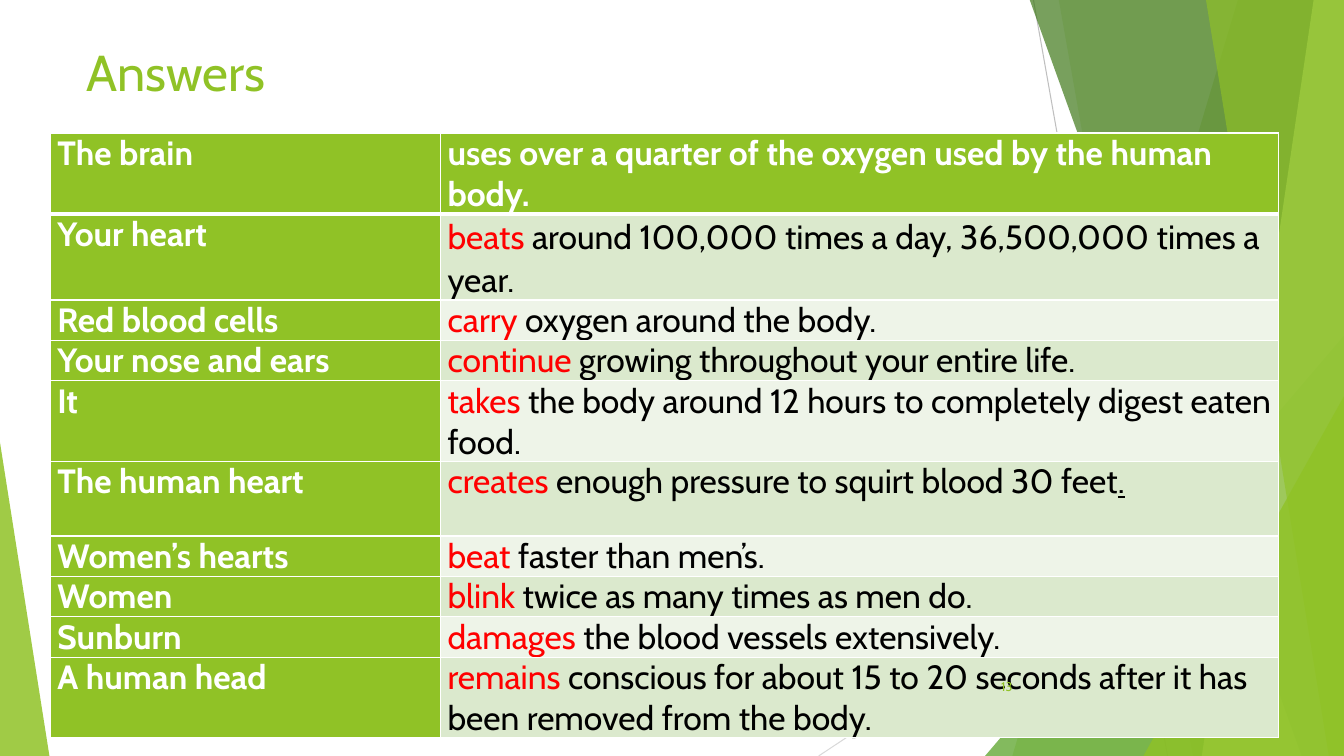
from dataclasses import dataclass

from lxml.etree import SubElement
from pptx import Presentation
from pptx.dml.color import RGBColor
from pptx.enum.shapes import MSO_CONNECTOR, MSO_SHAPE
from pptx.enum.text import MSO_ANCHOR, PP_ALIGN
from pptx.oxml import parse_xml
from pptx.oxml.ns import nsdecls, qn
from pptx.util import Inches, Pt


@dataclass(frozen=True)
class Theme:
    font: str = "Cabin"
    lime: str = "90C226"
    green: str = "54A021"
    dark: str = "3F7819"
    pale: str = "C0E474"
    white: str = "FFFFFF"
    black: str = "000000"
    red: str = "FF0000"
    bands: tuple = ("EEF4E8", "DBE9CD")
    title: int = 36
    body: int = 24
    small: int = 9


THEME = Theme()
WIDE, HIGH = 13.33, 7.5

# Row height, subject, verb, rest of the sentence
FACTS = [
    (0.8, "The brain", "uses", " over a quarter of the oxygen used by the human body."),
    (0.85, "Your heart", "beats", " around 100,000 times a day, 36,500,000 times a year."),
    (0.4, "Red blood cells", "carry", " oxygen around the body."),
    (0.4, "Your nose and ears", "continue", " growing throughout your entire life."),
    (0.8, "It", "takes", " the body around 12 hours to completely digest eaten food."),
    (0.74, "The human heart", "creates", " enough pressure to squirt blood 30 feet."),
    (0.4, "Women’s hearts", "beat", " faster than men’s."),
    (0.4, "Women", "blink", " twice as many times as men do."),
    (0.4, "Sunburn", "damages", " the blood vessels extensively."),
    (0.8, "A human head", "remains",
     " conscious for about 15 to 20 seconds after it has been removed from the body."),
]


def rgb(code):
    return RGBColor.from_string(code)


def style(font, size, color, bold=False):
    font.name, font.size, font.bold = THEME.font, Pt(size), bold
    font.color.rgb = rgb(color)


def paint(shape, color, alpha):
    """Flat, see-through fill without line or shadow."""
    shape.shadow.inherit = False
    shape.line.fill.background()
    shape.fill.solid()
    shape.fill.fore_color.rgb = rgb(color)
    tint = shape.fill._xPr.find(qn("a:solidFill"))[0]
    SubElement(tint, qn("a:alpha"), val=str(alpha * 1000))


def add_ray(slide, start, end, color):
    ends = [Inches(v) for v in start + end]
    ray = slide.shapes.add_connector(MSO_CONNECTOR.STRAIGHT, *ends)
    ray.line.color.rgb = rgb(color)
    ray.line.width = Pt(0.75)
    SubElement(ray._element.spPr, qn("a:effectLst"))


def add_shard(slide, top, foot, color, alpha):
    """Band from a slanted left edge to the right side of the slide."""
    pen = slide.shapes.build_freeform(Inches(top), Inches(-0.01))
    points = [(WIDE, -0.01), (WIDE, HIGH), (foot, HIGH)]
    pen.add_line_segments([(Inches(x), Inches(y)) for x, y in points])
    paint(pen.convert_to_shape(), color, alpha)


def add_wedge(slide, left, top, width, tip, color, alpha):
    """Triangle that stands on the bottom of the slide."""
    box = [Inches(v) for v in (left, top, width, HIGH - top)]
    wedge = slide.shapes.add_shape(MSO_SHAPE.ISOSCELES_TRIANGLE, *box)
    wedge.adjustments[0] = tip
    paint(wedge, color, alpha)


def add_decor(slide):
    add_ray(slide, (10.25, 0), (11.58, HIGH), "BFBFBF")
    add_ray(slide, (WIDE, 4.03), (8.12, HIGH), "D9D9D9")
    add_shard(slide, 12.28, 10.04, THEME.lime, 30)
    add_shard(slide, 10.5, 11.83, THEME.lime, 20)
    add_wedge(slide, 9.77, 3.33, 3.56, 1, THEME.green, 72)
    add_shard(slide, 10.21, 12.91, THEME.dark, 70)
    add_shard(slide, 13.03, 11.92, THEME.pale, 70)
    add_shard(slide, 11.96, 13.18, THEME.lime, 65)
    add_wedge(slide, 11.34, 3.93, 1.99, 1, THEME.lime, 80)
    add_wedge(slide, 0, 4.39, 0.49, 0, THEME.lime, 85)


def add_label(slide, box, text, size, align=PP_ALIGN.LEFT, anchor=MSO_ANCHOR.TOP):
    frame = slide.shapes.add_textbox(*[Inches(v) for v in box]).text_frame
    frame.word_wrap = True
    frame.vertical_anchor = anchor
    para = frame.paragraphs[0]
    para.text, para.alignment = text, align
    style(para.font, size, THEME.lime)


def set_cell(cell, fill, foot):
    """Fill, insets and white borders; foot is the bottom line width."""
    cell.margin_left = cell.margin_right = Inches(0.07)
    cell.margin_top = cell.margin_bottom = 0
    cell.fill.solid()
    cell.fill.fore_color.rgb = rgb(fill)
    props = cell._tc.get_or_add_tcPr()
    for i, (side, width) in enumerate(zip("LRTB", (1, 1, 1, foot))):
        props.insert(i, parse_xml(
            f'<a:ln{side} {nsdecls("a")} w="{Pt(width)}"><a:solidFill>'
            f'<a:srgbClr val="{THEME.white}"/></a:solidFill></a:ln{side}>'))


def add_facts(slide, left, top, cols):
    high = sum(fact[0] for fact in FACTS)
    box = [Inches(v) for v in (left, top, sum(cols), high)]
    table = slide.shapes.add_table(len(FACTS), len(cols), *box).table
    for col, width in zip(table.columns, cols):
        col.width = Inches(width)

    for i, (height, who, verb, rest) in enumerate(FACTS):
        table.rows[i].height = Inches(height)
        name, fact = table.cell(i, 0), table.cell(i, 1)
        head = i == 0
        foot = 3 if head else 1
        set_cell(name, THEME.lime, foot)
        set_cell(fact, THEME.lime if head else THEME.bands[i % 2], foot)

        # Subject
        para = name.text_frame.paragraphs[0]
        para.text = who
        style(para.font, THEME.body, THEME.white, True)

        # Sentence, with the verb in red below the heading row
        para = fact.text_frame.paragraphs[0]
        if head:
            para.text = verb + rest
            style(para.font, THEME.body, THEME.white, True)
            continue
        parts = [(verb, THEME.red), (rest, THEME.black)]
        if who == "The human heart":
            parts[1:] = [(rest[:-1], THEME.black), (".", THEME.black)]
        for text, color in parts:
            run = para.add_run()
            run.text = text
            style(run.font, THEME.body, color)
            run.font.underline = text == "."
        if who == "Your heart":
            para.line_spacing, para.space_after = 1.07, Pt(8)


def main():
    deck = Presentation()
    deck.slide_width, deck.slide_height = Inches(WIDE), Inches(HIGH)
    slide = deck.slides.add_slide(deck.slide_layouts[6])
    add_decor(slide)
    add_label(slide, (0.76, 0.36, 9.4, 1.44), "Answers", THEME.title)
    add_facts(slide, 0.5, 1.32, (3.87, 8.31))
    add_label(slide, (9.39, 6.61, 0.75, 0.4), "13", THEME.small,
              PP_ALIGN.RIGHT, MSO_ANCHOR.MIDDLE)
    deck.save("out.pptx")


if __name__ == "__main__":
    main()
